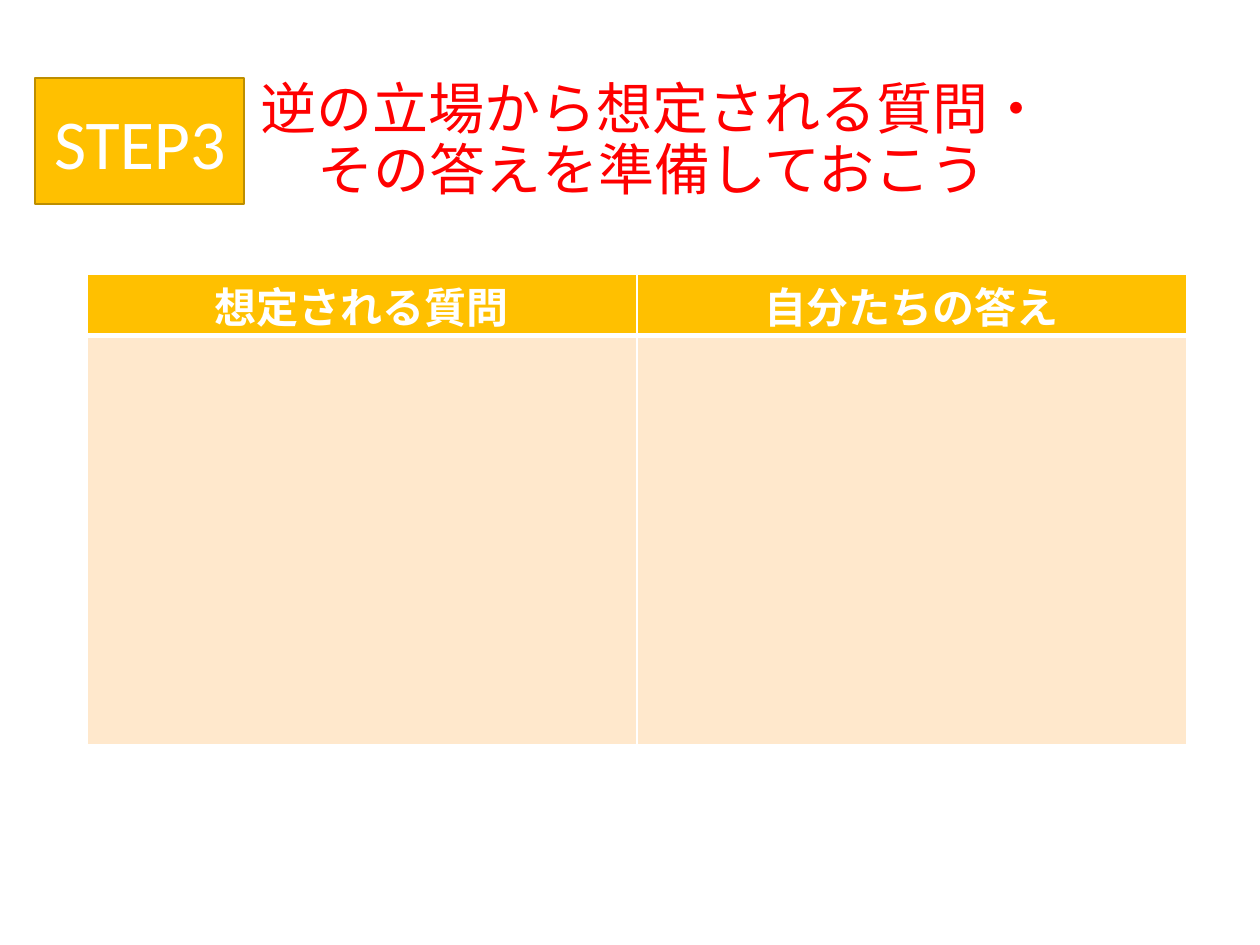
from dataclasses import dataclass

from lxml import etree
from pptx import Presentation
from pptx.dml.color import RGBColor
from pptx.enum.shapes import MSO_SHAPE
from pptx.enum.text import MSO_ANCHOR, MSO_AUTO_SIZE, PP_ALIGN
from pptx.oxml.ns import qn
from pptx.util import Inches, Pt

RECTANGLE = MSO_SHAPE.RECTANGLE
CENTER = PP_ALIGN.CENTER
MIDDLE = MSO_ANCHOR.MIDDLE
NO_AUTOFIT = MSO_AUTO_SIZE.NONE
TITLE_ONLY = 5


@dataclass(frozen=True)
class Theme:
    font: str = "Calibri"
    red: str = "FF0000"
    gold: str = "FFC000"
    dark_gold: str = "BD8E00"
    cream: str = "FFE8CC"
    white: str = "FFFFFF"
    title_size: int = 32
    badge_size: int = 40
    header_size: int = 24


def rgb(value):
    return RGBColor.from_string(value)


def write_text(tf, text, *, font, size, color, bold=False, spacing=None):
    """Fill a text frame with one centred paragraph; \\v breaks a line."""
    tf.word_wrap = True
    p = tf.paragraphs[0]
    p.text = text
    p.alignment = CENTER
    if spacing:
        p.line_spacing = spacing
    for r in p.runs:
        r.font.name = font
        r.font.size = Pt(size)
        r.font.bold = bold
        r.font.color.rgb = rgb(color)


def set_borders(cell, color, **widths):
    """Draw cell borders; they have to precede the fill in the XML."""
    tc_pr = cell._tc.get_or_add_tcPr()
    for i, (side, width) in enumerate(widths.items()):
        ln = etree.Element(qn(f"a:ln{side}"), w=str(Pt(width)))
        fill = etree.SubElement(ln, qn("a:solidFill"))
        etree.SubElement(fill, qn("a:srgbClr"), val=color)
        tc_pr.insert(i, ln)


class SlideBuilder:
    def __init__(self, slide, theme):
        self.s = slide
        self.theme = theme

    def title(self, text, left, top, width, height, inset):
        sp = self.s.shapes.title
        sp.left, sp.top = Inches(left), Inches(top)
        sp.width, sp.height = Inches(width), Inches(height)
        tf = sp.text_frame
        tf.auto_size = NO_AUTOFIT
        tf.vertical_anchor = MIDDLE
        tf.margin_left = Inches(inset)
        write_text(tf, text, font=self.theme.font, size=self.theme.title_size,
                   color=self.theme.red, spacing=0.9)

    def badge(self, text, left, top, width, height):
        sp = self.s.shapes.add_shape(RECTANGLE, Inches(left), Inches(top),
                                     Inches(width), Inches(height))
        sp.shadow.inherit = False
        sp.fill.solid()
        sp.fill.fore_color.rgb = rgb(self.theme.gold)
        sp.line.color.rgb = rgb(self.theme.dark_gold)
        sp.line.width = Pt(1)
        sp.text_frame.vertical_anchor = MIDDLE
        write_text(sp.text_frame, text, font=self.theme.font,
                   size=self.theme.badge_size, color=self.theme.white)

    def table(self, headers, left, top, width, row_heights):
        theme = self.theme
        table = self.s.shapes.add_table(
            len(row_heights), len(headers), Inches(left), Inches(top),
            Inches(width), Inches(sum(row_heights))).table
        for row, height in zip(table.rows, row_heights):
            row.height = Inches(height)
        for col, header in enumerate(headers):
            head, body = table.cell(0, col), table.cell(1, col)
            for cell, color in ((head, theme.gold), (body, theme.cream)):
                cell.fill.solid()
                cell.fill.fore_color.rgb = rgb(color)
            head.margin_left = head.margin_right = Inches(0.07)
            head.margin_top = head.margin_bottom = 0
            write_text(head.text_frame, header, font=theme.font,
                       size=theme.header_size, color=theme.white, bold=True)
            set_borders(head, theme.white, L=1, R=1, T=1, B=3)
            set_borders(body, theme.white, L=1, R=1, T=3, B=1)


def main():
    prs = Presentation()
    prs.slide_width, prs.slide_height = Inches(10), Inches(7.5)
    slide = prs.slides.add_slide(prs.slide_layouts[TITLE_ONLY])
    builder = SlideBuilder(slide, Theme())

    # Heading, inset so that its text clears the step badge
    builder.title("逆の立場から想定される質問・\vその答えを準備しておこう",
                  0.69, 0.4, 8.62, 1.45, inset=0.46)
    builder.badge("STEP3", 0.28, 0.62, 1.66, 1)

    # Worksheet for questions and answers
    builder.table(["想定される質問", "自分たちの答え"],
                  0.69, 2.18, 8.73, [0.48, 3.25])

    prs.save("out.pptx")


if __name__ == "__main__":
    main()
